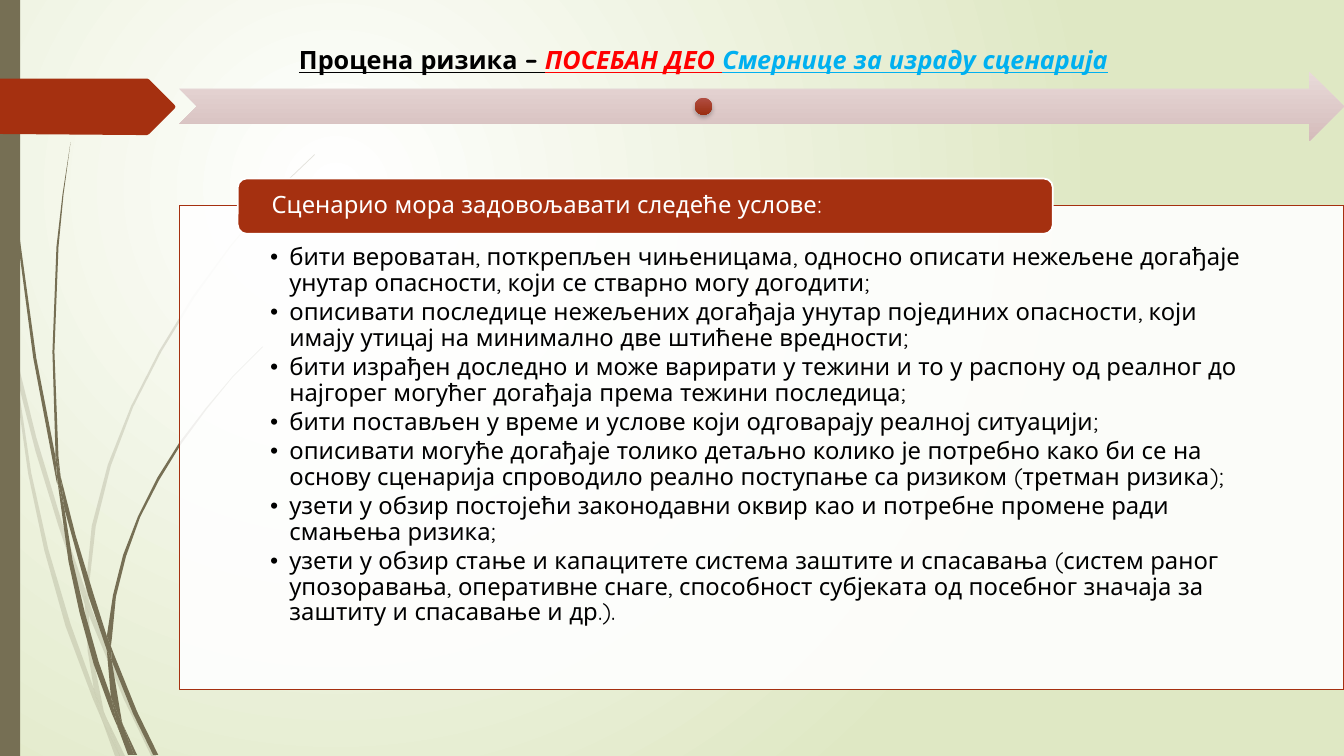
import lxml.etree
import pptx
import pptx.dml.color
import pptx.enum.shapes
import pptx.enum.text
import pptx.oxml
import pptx.oxml.ns
import pptx.util

Inches, Pt = pptx.util.Inches, pptx.util.Pt
SHAPE = pptx.enum.shapes.MSO_SHAPE
ALIGN = pptx.enum.text.PP_ALIGN
ANCHOR = pptx.enum.text.MSO_ANCHOR
qn = pptx.oxml.ns.qn

FONT = "Quicksand"
OLIVE, RUST, BLACK, WHITE = "766F54", "A53010", "000000", "FFFFFF"

# Outlines of the grass blades, in inches on the slide.
PALE_BLADES = [
    [(.11, 3.5), (.09, 3.22), (0, 2.82), (0, 2.99), (.1, 3.44)],
    [(.58, 5.22), (.84, 5.99), (.85, 5.86), (.62, 5.2), (.36, 4.34), (.14, 3.45), (.17, 3.76), (.35, 4.47)],
    [(.92, 6.07), (.88, 5.96), (.88, 6.1), (1.23, 6.94), (1.5, 7.5), (1.55, 7.5), (1.27, 6.92)],
    [(1.19, 7.5), (1.24, 7.5), (1.05, 7.11)],
    [(.93, 6.83), (.7, 6.19), (.48, 5.45), (.31, 4.69), (.17, 3.76), (.11, 3.5), (.28, 4.7),
     (.44, 5.46), (.65, 6.21), (.92, 6.93), (1.01, 7.14), (.99, 7.07)],
    [(.84, 5.99), (.87, 6.46), (.93, 6.83), (.96, 6.92), (1.05, 7.11), (1.03, 7.06), (.91, 6.46),
     (.88, 6.1), (.88, 6.08)],
    [(.88, 5.84), (.95, 5.22), (1.1, 4.62), (1.32, 4.04), (1.6, 3.49), (1.93, 2.95), (2.29, 2.45),
     (2.68, 1.98), (2.9, 1.75), (3.12, 1.54), (3.12, 1.53), (2.89, 1.75), (2.68, 1.97), (2.28, 2.44),
     (1.91, 2.94), (1.58, 3.48), (1.3, 4.03), (1.07, 4.61), (.91, 5.22), (.85, 5.84), (.88, 5.96)],
    [(1.01, 7.14), (1.14, 7.5), (1.19, 7.5)],
    [(.88, 6.08), (.88, 5.96), (.85, 5.86), (.84, 5.99)],
    [(.96, 6.92), (.93, 6.83), (.99, 7.07), (1.01, 7.14), (1.19, 7.5), (1.05, 7.11)],
]
DARK_BLADES = [
    [(.07, 1.1), (.17, 2.33), (.33, 3.55), (.56, 4.77), (.57, 4.81), (.55, 4.53), (.36, 3.55),
     (.19, 2.32), (.08, 1.09), (.05, .48), (.04, 0), (.03, 0), (.04, .48)],
    [(.88, 5.92), (1.06, 6.45), (1.06, 6.31), (.93, 5.9), (.75, 5.31), (.6, 4.72), (.64, 5.05)],
    [(1.13, 6.49), (1.1, 6.41), (1.11, 6.56), (1.32, 7.08), (1.52, 7.49), (1.57, 7.49), (1.36, 7.06)],
    [(1.1, 6.91), (.98, 6.57), (.84, 6.07), (.72, 5.56), (.64, 5.05), (.57, 4.77), (.68, 5.57),
     (.79, 6.08), (.93, 6.59), (1.11, 7.08), (1.17, 7.22), (1.16, 7.17)],
    [(.6, 4.72), (.58, 4.53), (.54, 3.49), (.58, 2.45), (.63, 1.93), (.7, 1.41), (.62, 1.93),
     (.56, 2.45), (.52, 3.49), (.55, 4.49)],
    [(1.33, 7.49), (1.36, 7.49), (1.22, 7.19)],
    [(.57, 4.77), (.64, 5.05), (.6, 4.72), (.55, 4.49), (.55, 4.53)],
    [(1.11, 6.33), (1.15, 5.92), (1.25, 5.52), (1.39, 5.13), (1.58, 4.76), (1.8, 4.4), (2.05, 4.06),
     (2.31, 3.74), (2.61, 3.44), (2.6, 3.44), (2.31, 3.73), (2.04, 4.05), (1.78, 4.39), (1.56, 4.74),
     (1.37, 5.12), (1.22, 5.51), (1.12, 5.91), (1.06, 6.31), (1.1, 6.41)],
    [(1.17, 7.22), (1.27, 7.49), (1.31, 7.49)],
    [(1.06, 6.45), (1.1, 6.91), (1.16, 7.06), (1.22, 7.19), (1.21, 7.16), (1.11, 6.56)],
    [(1.06, 6.45), (1.11, 6.56), (1.1, 6.41), (1.06, 6.31)],
    [(1.16, 7.06), (1.1, 6.91), (1.17, 7.22), (1.3, 7.49), (1.33, 7.49), (1.22, 7.19)],
]
TAG = [(1.73, 1.08), (1.48, 1.33), (1.46, 1.34), (1.36, 1.34), (0, 1.33), (0, .78), (1.46, .78),
       (1.48, .79), (1.73, 1.04), (1.74, 1.06)]

TITLE = [
    ("Процена ризика – ", BLACK, False),
    ("ПОСЕБАН ДЕО ", "FF0000", True),
    ("Смернице за израду сценарија", "00B0F0", True),
]
HEADING = "Сценарио мора задовољавати следеће услове:"
CONDITIONS = [
    "бити вероватан, поткрепљен чињеницама, односно описати нежељене догађаје унутар опасности, који се стварно могу догодити;",
    "описивати последице нежељених догађаја унутар појединих опасности, који имају утицај на минимално две штићене вредности;",
    "бити израђен доследно и може варирати у тежини и то у распону од реалног до најгорег могућег догађаја према тежини последица;",
    "бити постављен у време и услове који одговарају реалној ситуацији;",
    "описивати могуће догађаје толико детаљно колико је потребно како би се на основу сценарија спроводило реално поступање са ризиком (третман ризика);",
    "узети у обзир постојећи законодавни оквир као и потребне промене ради смањења ризика;",
    "узети у обзир стање и капацитете система заштите и спасавања (систем раног упозоравања, оперативне снаге, способност субјеката од посебног значаја за заштиту и спасавање и др.).",
]


def rgb(color):
    return pptx.dml.color.RGBColor.from_string(color)


def set_format(target, values):
    for key, value in values.items():
        setattr(target, key, value)


def paint(shape, fill, opacity=100, line=None):
    shape.shadow.inherit = False
    shape.fill.solid()
    shape.fill.fore_color.rgb = rgb(fill)
    if opacity < 100:
        color = shape.fill._xPr.find(".//" + qn("a:srgbClr"))
        lxml.etree.SubElement(color, qn("a:alpha"), val=str(opacity * 1000))
    if line:
        shape.line.color.rgb = rgb(line)
        shape.line.width = Pt(1.25)
    else:
        shape.line.fill.background()


def shade(fill, start, end):
    """Fill with a gradient that runs from top to bottom."""
    fill.gradient()
    fill.gradient_angle = 270
    for stop, color in zip(fill.gradient_stops, (start, end)):
        stop.color.rgb = rgb(color)


def add_preset(slide, kind, box):
    return slide.shapes.add_shape(kind, *map(Inches, box))


def add_outline(slide, points, fill, opacity=100):
    start, *others = [(Inches(x), Inches(y)) for x, y in points]
    builder = slide.shapes.build_freeform(*start)
    builder.add_line_segments(others, close=True)
    paint(builder.convert_to_shape(), fill, opacity)


def frame_text(shape, margins, anchor):
    left, top, right, bottom = map(Inches, margins)
    set_format(shape.text_frame, dict(
        word_wrap=True, vertical_anchor=anchor, margin_left=left,
        margin_top=top, margin_right=right, margin_bottom=bottom))
    return shape.text_frame


def add_run(paragraph, text, size, color, **style):
    run = paragraph.add_run()
    run.text = text
    set_format(run.font, dict(name=FONT, size=Pt(size), **style))
    run.font.color.rgb = rgb(color)


def draw_backdrop(slide, height):
    fill = slide.background.fill
    shade(fill, WHITE, "DFE8C4")
    linear = fill._xPr.find(".//" + qn("a:lin"))
    radial = pptx.oxml.parse_xml(
        f'<a:path {pptx.oxml.ns.nsdecls("a")} path="circle">'
        '<a:fillToRect l="50000" t="50000" r="100000" b="100000"/></a:path>')
    linear.getparent().replace(linear, radial)
    for blades, opacity in ((PALE_BLADES, 20), (DARK_BLADES, 100)):
        for blade in blades:
            add_outline(slide, blade, OLIVE, opacity)
    paint(add_preset(slide, SHAPE.RECTANGLE, (0, 0, .2, height)), OLIVE)
    add_outline(slide, TAG, RUST)


def draw_title(slide, left, top, width, height):
    """Title line above an arrow with a dot on it."""
    band = .69
    arrow_top = top + height - band
    arrow = add_preset(slide, SHAPE.NOTCHED_RIGHT_ARROW, (left, arrow_top, width, band))
    paint(arrow, WHITE)
    shade(arrow.fill, "E8DAD9", "D5BCBB")

    title = slide.shapes.add_textbox(*map(Inches, (left, top, width * .9, band)))
    paragraph = frame_text(title, [.14] * 4, ANCHOR.BOTTOM).paragraphs[0]
    set_format(paragraph, dict(alignment=ALIGN.CENTER, line_spacing=.9))
    for text, color, italic in TITLE:
        add_run(paragraph, text, 18, color, bold=True, underline=True, italic=italic)

    dot_size = .17
    dot = add_preset(slide, SHAPE.OVAL, (
        left + width * .45 - dot_size / 2, arrow_top + (band - dot_size) / 2, dot_size, dot_size))
    paint(dot, RUST)
    shade(dot.fill, "B14E43", "9A2D0F")
    effects = dot._element.spPr.find(qn("a:effectLst"))
    shadow = lxml.etree.SubElement(effects, qn("a:outerShdw"), blurRad=str(Pt(3)),
                                   dist=str(Pt(2)), dir="5400000")
    color = lxml.etree.SubElement(shadow, qn("a:srgbClr"), val=BLACK)
    lxml.etree.SubElement(color, qn("a:alpha"), val="25000")


def draw_conditions(slide, left, top, width, height):
    """Bulleted panel with a heading that straddles its top edge."""
    heading_height, overlap = .55, .27
    panel = add_preset(slide, SHAPE.RECTANGLE, (left, top + overlap, width, height - overlap))
    paint(panel, WHITE, 90, RUST)
    frame = frame_text(panel, (.9, .39, .9, .13), ANCHOR.TOP)
    for index, condition in enumerate(CONDITIONS):
        paragraph = frame.add_paragraph() if index else frame.paragraphs[0]
        set_format(paragraph, dict(alignment=ALIGN.LEFT, line_spacing=.9, space_after=Pt(2.5)))
        add_run(paragraph, condition, 17, BLACK)
        properties = paragraph._p.get_or_add_pPr()
        properties.set("marL", str(Inches(.19)))
        properties.set("indent", str(Inches(-.19)))
        lxml.etree.SubElement(properties, qn("a:buFont"), typeface=FONT)
        lxml.etree.SubElement(properties, qn("a:buChar"), char="•")

    heading = add_preset(slide, SHAPE.ROUNDED_RECTANGLE, (
        left + width * .05, top, width * .7, heading_height))
    paint(heading, RUST, line=WHITE)
    paragraph = frame_text(heading, (.31, 0, .31, 0), ANCHOR.MIDDLE).paragraphs[0]
    set_format(paragraph, dict(alignment=ALIGN.LEFT, line_spacing=.9))
    add_run(paragraph, HEADING, 17, WHITE)


def main():
    width, height, content_left = 13.33, 7.5, 1.78
    presentation = pptx.Presentation()
    set_format(presentation, dict(slide_width=Inches(width), slide_height=Inches(height)))
    slide = presentation.slides.add_slide(presentation.slide_layouts[6])
    draw_backdrop(slide, height)
    draw_title(slide, content_left, .19, width - content_left, 1.21)
    draw_conditions(slide, content_left, 1.77, width - content_left, 5.07)
    presentation.save("out.pptx")


if __name__ == "__main__":
    main()
